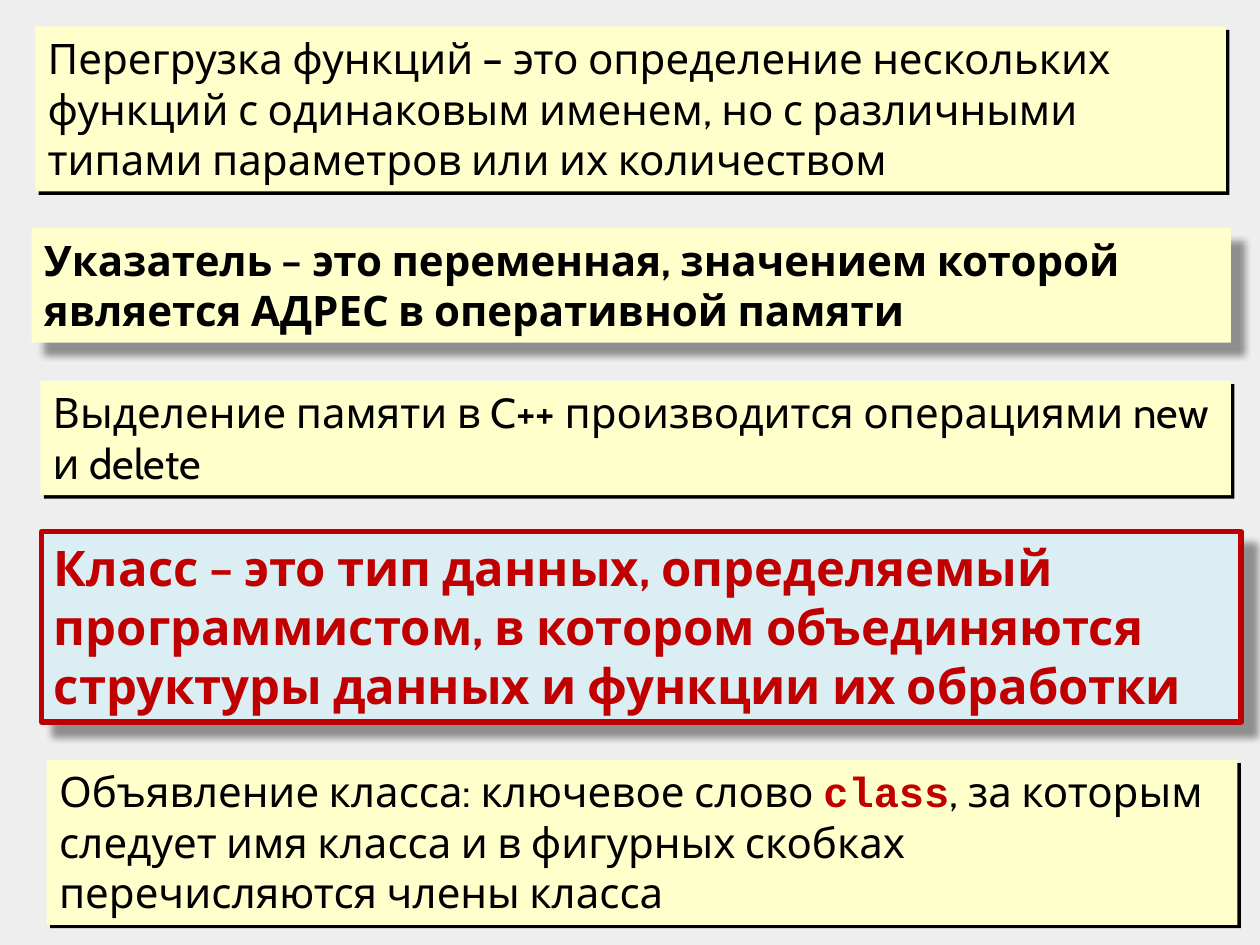
import lxml.etree
import pptx
import pptx.dml.color
import pptx.enum.shapes
import pptx.enum.text
import pptx.oxml.ns
import pptx.util

Inches = pptx.util.Inches
Pt = pptx.util.Pt
RGBColor = pptx.dml.color.RGBColor
qn = pptx.oxml.ns.qn

BACKGROUND = RGBColor(0xEE, 0xEE, 0xEE)
CREAM = RGBColor(0xFF, 0xFF, 0xCC)
PALE_BLUE = RGBColor(0xDB, 0xEE, 0xF4)
RED = RGBColor(0xC0, 0x00, 0x00)
BLACK = RGBColor(0x00, 0x00, 0x00)

HARD_SHADOW = {"opacity": 100, "blur": 0, "distance": 2.8}
SOFT_SHADOW = {"opacity": 40, "blur": 4, "distance": 10}


def add_text(text, *, paragraph, size=24, font="Cabin", color=BLACK, bold=False):
    run = paragraph.add_run()
    run.text = text
    run.font.size = Pt(size)
    run.font.name = font
    run.font.color.rgb = color
    run.font.bold = bold


class DefinitionSlide:
    def __init__(self, presentation):
        self.slide = presentation.slides.add_slide(presentation.slide_layouts[6])
        background = self.slide.background.fill
        background.solid()
        background.fore_color.rgb = BACKGROUND

    def add_shadow(self, shape, opacity, blur, distance):
        shape.shadow.inherit = False
        effects = shape._element.spPr.find(qn("a:effectLst"))
        shadow = lxml.etree.SubElement(
            effects, qn("a:outerShdw"), blurRad=str(Pt(blur)), dist=str(Pt(distance)),
            dir=str(45 * 60000), algn="tl", rotWithShape="0")
        color = lxml.etree.SubElement(shadow, qn("a:srgbClr"), val=str(BLACK))
        lxml.etree.SubElement(color, qn("a:alpha"), val=str(opacity * 1000))

    def add_box(self, left, top, width, height, runs, shadow=HARD_SHADOW,
                fill=CREAM, outline=None):
        shape = self.slide.shapes.add_shape(
            pptx.enum.shapes.MSO_SHAPE.RECTANGLE,
            Inches(left), Inches(top), Inches(width), Inches(height))
        shape.fill.solid()
        shape.fill.fore_color.rgb = fill
        if outline is None:
            shape.line.fill.background()
        else:
            shape.line.color.rgb = outline
            shape.line.width = Pt(3)
        self.add_shadow(shape, **shadow)
        frame = shape.text_frame
        frame.word_wrap = True
        frame.auto_size = pptx.enum.text.MSO_AUTO_SIZE.SHAPE_TO_FIT_TEXT
        frame.vertical_anchor = pptx.enum.text.MSO_ANCHOR.TOP
        paragraph = frame.paragraphs[0]
        paragraph.alignment = pptx.enum.text.PP_ALIGN.LEFT
        for text, text_format in runs:
            add_text(text, paragraph=paragraph, **text_format)


def main():
    presentation = pptx.Presentation()
    presentation.slide_width = Inches(10)
    presentation.slide_height = Inches(7.5)
    definitions = DefinitionSlide(presentation)

    definitions.add_box(
        0.33, 4.22, 9.52, 1.51,
        [("Класс – это тип данных, определяемый программистом, в котором "
          "объединяются структуры данных и функции их обработки",
          {"size": 28, "color": RED, "bold": True})],
        shadow=SOFT_SHADOW, fill=PALE_BLUE, outline=RED)
    definitions.add_box(
        0.25, 1.81, 9.52, 0.91,
        [("Указатель – это переменная, значением которой является АДРЕС "
          "в оперативной памяти", {"bold": True})],
        shadow=SOFT_SHADOW)
    definitions.add_box(
        0.28, 0.21, 9.45, 1.31,
        [("Перегрузка функций – это определение нескольких функций с одинаковым "
          "именем, но с различными типами параметров или их количеством", {})])
    definitions.add_box(
        0.37, 6.03, 9.45, 1.31,
        [("Объявление класса: ключевое слово ", {}),
         ("class", {"font": "Courier New", "color": RED, "bold": True}),
         (", за которым следует имя класса и в фигурных скобках "
          "перечисляются члены класса", {})])
    definitions.add_box(
        0.32, 3.02, 9.45, 0.91,
        [("Выделение памяти в C++ производится операциями new и delete", {})])

    presentation.save("out.pptx")


if __name__ == "__main__":
    main()
